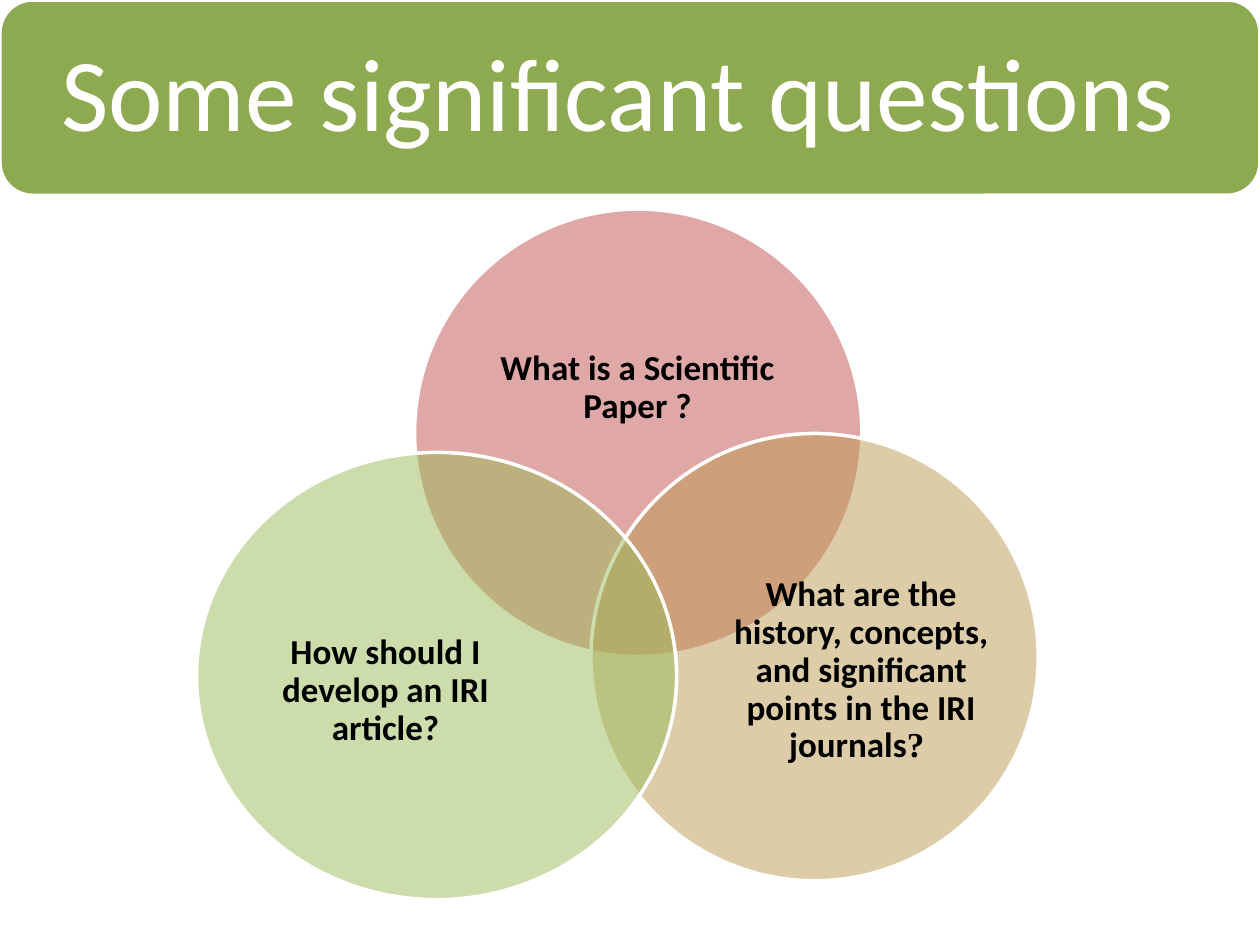
from dataclasses import dataclass

from lxml.etree import SubElement
from pptx import Presentation
from pptx.dml.color import RGBColor
from pptx.enum.shapes import MSO_SHAPE
from pptx.enum.text import MSO_ANCHOR, MSO_AUTO_SIZE, PP_ALIGN
from pptx.oxml.ns import qn
from pptx.util import Inches, Pt


@dataclass(frozen=True)
class Theme:
    banner: str = "8DAA51"
    light: str = "FFFFFF"
    dark: str = "000000"
    font: str = "Calibri"
    mark_font: str = "Times New Roman"
    title_size: int = 59
    body_size: int = 20
    outline: int = 2
    circle_alpha: int = 50


THEME = Theme()
SLIDE_WIDTH, SLIDE_HEIGHT = 10, 7.5
BANNER_HEIGHT, BANNER_MARGIN, BANNER_INSET = 1.55, 0.08, 0.25
CIRCLE_HEIGHT = 3.55

TITLE = "Some significant questions "
# Runs of text with their font, circle (left, top, width), label box, colour
QUESTIONS = [
    {"runs": [("What is a Scientific Paper ?", THEME.font)],
     "circle": (3.29, 1.66, 3.55), "label": (3.76, 2.28, 2.6, 1.6),
     "color": "C0504D"},
    {"runs": [("What are the history, concepts, and significant points "
               "in the IRI journals", THEME.font), ("? ", THEME.mark_font)],
     "circle": (4.69, 3.44, 3.55), "label": (5.77, 4.35, 2.13, 1.95),
     "color": "BD9B53"},
    {"runs": [("How should I develop an IRI article?", THEME.font)],
     "circle": (1.56, 3.59, 3.81), "label": (1.92, 4.51, 2.28, 1.95),
     "color": "9BBB59"},
]


def add_panel(page, preset, area, color, alpha=None):
    """Add a filled shape with a white outline; alpha is opacity in percent."""
    panel = page.shapes.add_shape(preset, *map(Inches, area))
    panel.shadow.inherit = False
    panel.fill.solid()
    panel.fill.fore_color.rgb = RGBColor.from_string(color)
    panel.line.color.rgb = RGBColor.from_string(THEME.light)
    panel.line.width = Pt(THEME.outline)
    if alpha is not None:
        fill_color = panel.element.spPr.find(qn("a:solidFill"))[0]
        SubElement(fill_color, qn("a:alpha"), val=str(alpha * 1000))


def write_text(box, runs, *, size, color, bold=False, inset=0):
    frame = box.text_frame
    frame.word_wrap = True
    frame.auto_size = MSO_AUTO_SIZE.NONE
    frame.vertical_anchor = MSO_ANCHOR.MIDDLE
    frame.margin_left = frame.margin_right = Inches(inset)
    frame.margin_top = frame.margin_bottom = Inches(inset)
    para = frame.paragraphs[0]
    para.alignment = PP_ALIGN.CENTER
    para.line_spacing = 0.9
    for text, font in runs:
        span = para.add_run()
        span.text = text
        span.font.name = font
        span.font.size = Pt(size)
        span.font.bold = bold
        span.font.color.rgb = RGBColor.from_string(color)


def add_banner(page):
    add_panel(page, MSO_SHAPE.ROUNDED_RECTANGLE,
              (0, 0, SLIDE_WIDTH, BANNER_HEIGHT), THEME.banner)
    title = page.shapes.title
    title.left = title.top = Inches(BANNER_MARGIN)
    title.width = Inches(SLIDE_WIDTH - 2 * BANNER_MARGIN)
    title.height = Inches(BANNER_HEIGHT - 2 * BANNER_MARGIN)
    write_text(title, [(TITLE, THEME.font)], size=THEME.title_size,
               color=THEME.light, inset=BANNER_INSET)
    # Bring the title in front of the banner
    title.element.getparent().append(title.element)


def add_question(page, question):
    add_panel(page, MSO_SHAPE.OVAL, (*question["circle"], CIRCLE_HEIGHT),
              question["color"], THEME.circle_alpha)
    label = page.shapes.add_textbox(*map(Inches, question["label"]))
    write_text(label, question["runs"], size=THEME.body_size,
               color=THEME.dark, bold=True)


def main():
    deck = Presentation()
    deck.slide_width, deck.slide_height = Inches(SLIDE_WIDTH), Inches(SLIDE_HEIGHT)
    page = deck.slides.add_slide(deck.slide_layouts.get_by_name("Title Only"))
    add_banner(page)
    for question in QUESTIONS:
        add_question(page, question)
    deck.save("out.pptx")


if __name__ == "__main__":
    main()
